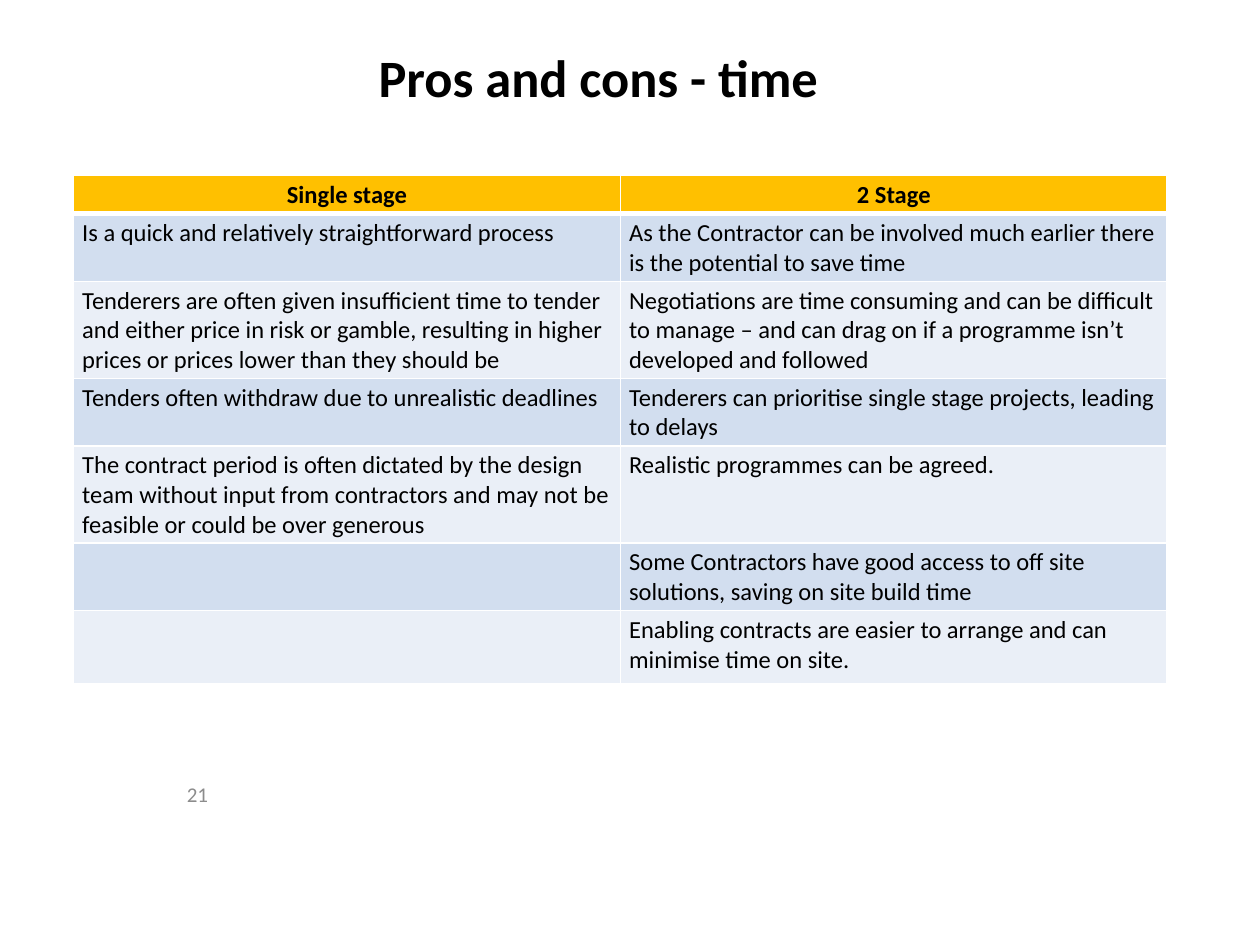
from dataclasses import dataclass

import pptx
import pptx.dml.color
import pptx.enum.text
import pptx.oxml
import pptx.oxml.ns
import pptx.util
from pptx.util import Pt

ALIGN = pptx.enum.text.PP_ALIGN
MIDDLE = pptx.enum.text.MSO_ANCHOR.MIDDLE
FONT = "Calibri"
BLACK = "000000"
WHITE = "FFFFFF"
HEADER_FILL = "FFC000"
BAND_FILLS = ("D2DEEF", "EAEFF7")


@dataclass
class Row:
    height: float
    single_stage: str
    two_stage: str


ROWS = [
    Row(21.9, "Single stage", "2 Stage"),
    Row(38.5, "Is a quick and relatively straightforward process",
        "As the Contractor can be involved much earlier there is the potential to save time"),
    Row(54, "Tenderers are often given insufficient time to tender and either price in risk "
        "or gamble, resulting in higher prices or prices lower than they should be",
        "Negotiations are time consuming and can be difficult to manage – and can drag on "
        "if a programme isn’t developed and followed"),
    Row(38.5, "Tenders often withdraw due to unrealistic deadlines",
        "Tenderers can prioritise single stage projects, leading to delays"),
    Row(54, "The contract period is often dictated by the design team without input from "
        "contractors and may not be feasible or could be over generous",
        "Realistic programmes can be agreed."),
    Row(38.5, "", "Some Contractors have good access to off site solutions, saving on site build time"),
    Row(41.5, "", "Enabling contracts are easier to arrange and can minimise time on site."),
]


def rgb(color: str) -> pptx.dml.color.RGBColor:
    return pptx.dml.color.RGBColor.from_string(color)


def add_text(tf, text: str, size: float, color: str = BLACK, bold: bool = False,
             align=ALIGN.LEFT) -> None:
    p = tf.paragraphs[0]
    p.alignment = align
    p.font.size = Pt(size)
    if text:
        r = p.add_run()
        r.text = text
        r.font.name = FONT
        r.font.size = Pt(size)
        r.font.bold = bold
        r.font.color.rgb = rgb(color)


def set_borders(cell, bottom: float) -> None:
    tc_pr = cell._tc.get_or_add_tcPr()
    for side, width in (("L", 1), ("R", 1), ("T", 1), ("B", bottom)):
        tc_pr.append(pptx.oxml.parse_xml(
            f'<a:ln{side} {pptx.oxml.ns.nsdecls("a")} w="{Pt(width)}"><a:solidFill>'
            f'<a:srgbClr val="{WHITE}"/></a:solidFill></a:ln{side}>'))


def add_comparison(s, left: float, top: float, column_width: float) -> None:
    height = sum(row.height for row in ROWS)
    table = s.shapes.add_table(len(ROWS), 2, Pt(left), Pt(top),
                               Pt(2 * column_width), Pt(height)).table
    for column in table.columns:
        column.width = Pt(column_width)
    for i, row in enumerate(ROWS):
        table.rows[i].height = Pt(row.height)
        header = i == 0
        for j, text in enumerate((row.single_stage, row.two_stage)):
            cell = table.cell(i, j)
            cell.margin_left = cell.margin_right = Pt(5)
            cell.margin_top = cell.margin_bottom = Pt(2.5)
            set_borders(cell, 3 if header else 1)
            cell.fill.solid()
            cell.fill.fore_color.rgb = rgb(HEADER_FILL if header else BAND_FILLS[(i - 1) % 2])
            add_text(cell.text_frame, text, 14, bold=header,
                     align=ALIGN.CENTER if header else ALIGN.LEFT)


def add_title(s, text: str) -> None:
    sp = s.shapes.title
    sp.left, sp.top, sp.width, sp.height = Pt(85.7), Pt(12.2), Pt(512.6), Pt(63.4)
    sp.text_frame.vertical_anchor = MIDDLE
    add_text(sp.text_frame, text, 30, bold=True, align=ALIGN.CENTER)


def add_slide_number(s, number: str) -> None:
    sp = s.shapes.add_textbox(Pt(0), Pt(442.8), Pt(126), Pt(21.6))
    tf = sp.text_frame
    tf.word_wrap = True
    tf.vertical_anchor = MIDDLE
    add_text(tf, number, 12, "8C8C8C", align=ALIGN.RIGHT)


def main() -> None:
    prs = pptx.Presentation()
    prs.slide_width, prs.slide_height = Pt(720), Pt(540)
    s = prs.slides.add_slide(prs.slide_layouts.get_by_name("Title Only"))
    add_slide_number(s, "21")
    add_title(s, "Pros and cons - time")
    add_comparison(s, 42, 100.3, 312.5)
    prs.save("out.pptx")


if __name__ == "__main__":
    main()
